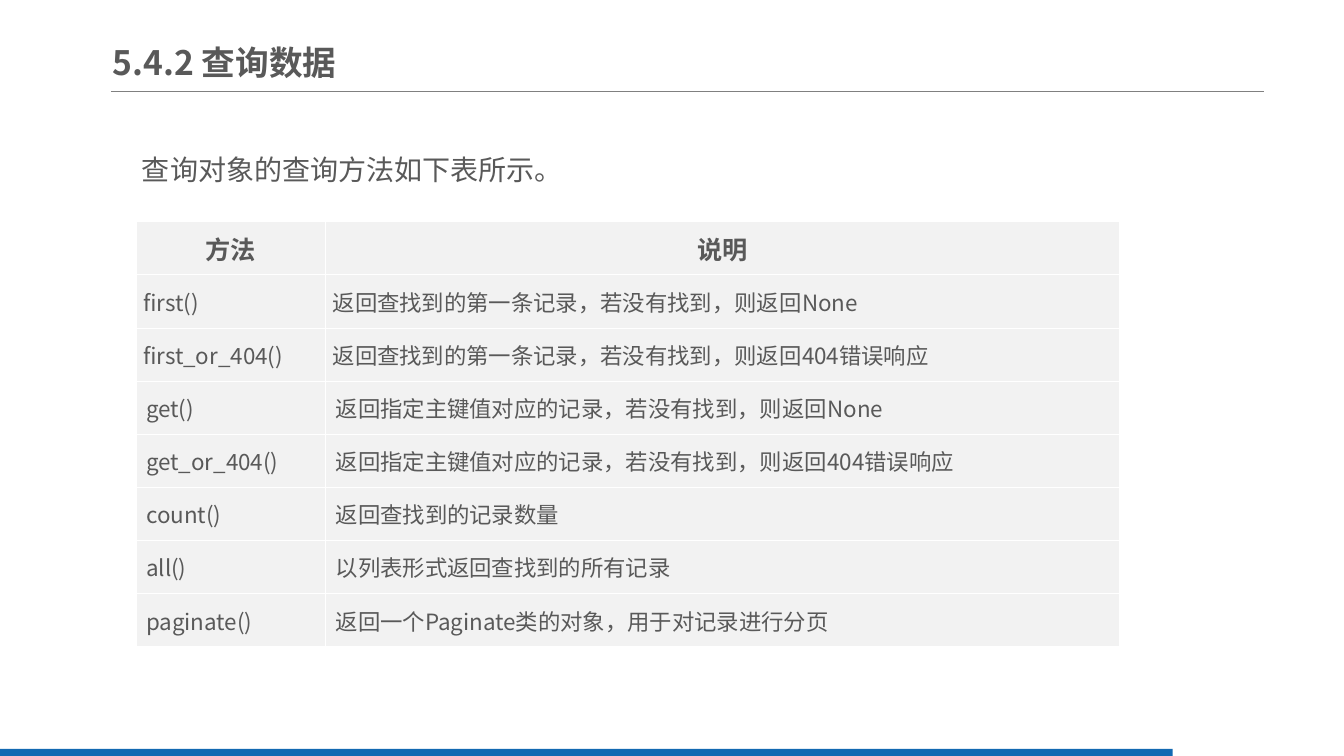
"""Build the slide that lists the query methods of a query object."""
from typing import NamedTuple

from lxml import etree
from pptx import Presentation
from pptx import util as u
from pptx.dml.color import RGBColor
from pptx.enum import shapes, text
from pptx.oxml import ns

FONT = "Noto Sans CJK SC"
INK = RGBColor(0x59, 0x59, 0x59)
RULE = RGBColor(0x80, 0x80, 0x80)
BLUE = RGBColor(0x13, 0x69, 0xB2)
CELL = RGBColor(0xF2, 0xF2, 0xF2)
WHITE = RGBColor(0xFF, 0xFF, 0xFF)

TIGHT = (0.07, 0)
ROOMY = (0.1, 0.05)


class Label(NamedTuple):
    text: str
    box: tuple[float, float, float, float]
    size: int
    bold: bool
    margins: tuple[float, float]
    anchor: text.MSO_ANCHOR
    spacing: float


class Row(NamedTuple):
    method: str
    note: str
    margins: tuple[float, float] = ROOMY


LABELS = [
    Label("查询对象的查询方法如下表所示。", (1.31, 1.3, 5.91, 0.61), 20, False,
          ROOMY, text.MSO_ANCHOR.TOP, 1.5),
    Label("5.4.2 查询数据", (1.12, 0.34, 4.89, 0.55), 24, True,
          (0, 0.07), text.MSO_ANCHOR.MIDDLE, 1.0),
]
ROWS = [
    Row("方法", "说明", TIGHT),
    Row("first()", "返回查找到的第一条记录，若没有找到，则返回None", TIGHT),
    Row("first_or_404()", "返回查找到的第一条记录，若没有找到，则返回404错误响应", TIGHT),
    Row("get()", "返回指定主键值对应的记录，若没有找到，则返回None"),
    Row("get_or_404()", "返回指定主键值对应的记录，若没有找到，则返回404错误响应"),
    Row("count()", "返回查找到的记录数量"),
    Row("all()", "以列表形式返回查找到的所有记录"),
    Row("paginate()", "返回一个Paginate类的对象，用于对记录进行分页"),
]
COLUMN_WIDTHS = (1.88, 7.87)


def write(p, words: str, size: int, bold: bool) -> None:
    """Put words into a paragraph in the slide's typeface."""
    p.add_run().text = words
    p.font.size = u.Pt(size)
    p.font.bold = bold
    p.font.name = FONT
    p.font.color.rgb = INK
    props = p._p.pPr.find(ns.qn("a:defRPr"))
    etree.SubElement(props, ns.qn("a:ea"), typeface=FONT)


def set_margins(target, margins: tuple[float, float]) -> None:
    """Set the side and the top and bottom margins of a cell or text frame."""
    side, end = map(u.Inches, margins)
    target.margin_left = target.margin_right = side
    target.margin_top = target.margin_bottom = end


def add_label(s, label: Label) -> None:
    """Add one text box."""
    tf = s.shapes.add_textbox(*map(u.Inches, label.box)).text_frame
    tf.word_wrap = True
    tf.vertical_anchor = label.anchor
    set_margins(tf, label.margins)
    p = tf.paragraphs[0]
    p.line_spacing = label.spacing
    write(p, label.text, label.size, label.bold)


def add_borders(cell) -> None:
    """Give a cell thin white borders."""
    props = cell._tc.get_or_add_tcPr()
    for i, side in enumerate(("lnL", "lnR", "lnT", "lnB")):
        ln = etree.Element(ns.qn(f"a:{side}"), w=str(u.Pt(0.75)))
        fill = etree.SubElement(ln, ns.qn("a:solidFill"))
        etree.SubElement(fill, ns.qn("a:srgbClr"), val=str(WHITE))
        props.insert(i, ln)


def add_methods(s) -> None:
    """Add the table of query methods."""
    box = (1.35, 2.2, sum(COLUMN_WIDTHS), 4.22)
    table = s.shapes.add_table(len(ROWS), 2, *map(u.Inches, box)).table
    for column, width in zip(table.columns, COLUMN_WIDTHS):
        column.width = u.Inches(width)
    for i, row in enumerate(ROWS):
        header = i == 0
        for cell, words in zip(table.rows[i].cells, (row.method, row.note)):
            cell.fill.solid()
            cell.fill.fore_color.rgb = CELL
            cell.vertical_anchor = text.MSO_ANCHOR.MIDDLE
            set_margins(cell, row.margins)
            add_borders(cell)
            p = cell.text_frame.paragraphs[0]
            p.alignment = text.PP_ALIGN.CENTER if header else text.PP_ALIGN.LEFT
            write(p, words, 18 if header else 16, header)


def add_frame(s) -> None:
    """Add the line under the title and the bar at the foot."""
    ends = map(u.Inches, (1.1, 0.91, 12.54, 0.91))
    line = s.shapes.add_connector(shapes.MSO_CONNECTOR.STRAIGHT, *ends)
    line.line.color.rgb = RULE
    line.line.width = u.Pt(0.75)
    etree.SubElement(line._element.spPr, ns.qn("a:effectLst"))
    box = map(u.Inches, (0, 7.43, 11.63, 0.09))
    bar = s.shapes.add_shape(shapes.MSO_SHAPE.RECTANGLE, *box)
    bar.shadow.inherit = False
    bar.fill.solid()
    bar.fill.fore_color.rgb = BLUE
    bar.line.fill.background()


def main() -> None:
    """Build and save the presentation."""
    prs = Presentation()
    prs.slide_width = u.Inches(13.33)
    prs.slide_height = u.Inches(7.5)
    s = prs.slides.add_slide(prs.slide_layouts[6])
    add_frame(s)
    for label in LABELS:
        add_label(s, label)
    add_methods(s)
    prs.save("out.pptx")


if __name__ == "__main__":
    main()
